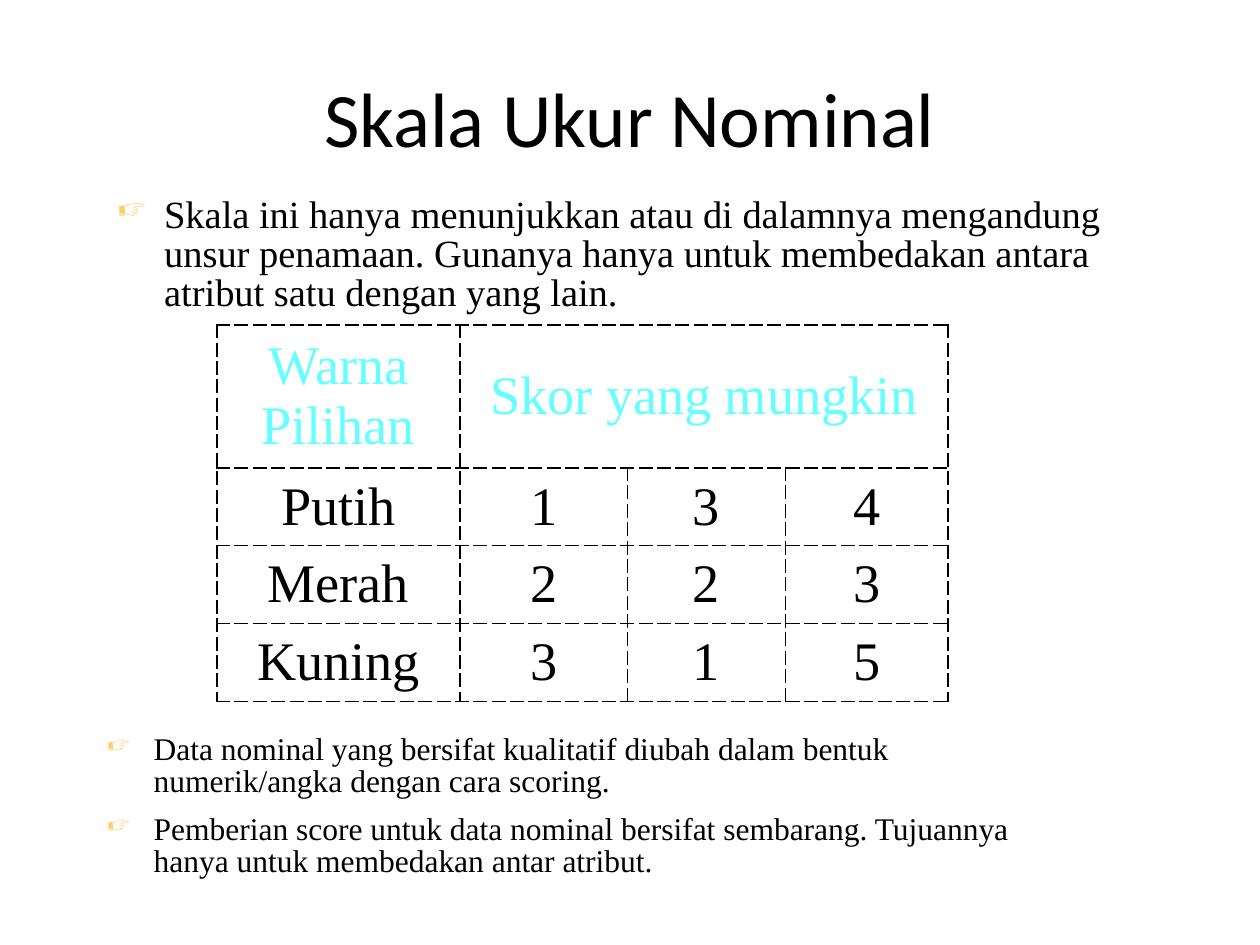
from dataclasses import dataclass

from lxml import etree
from pptx import Presentation, util as u
from pptx.dml.color import RGBColor
from pptx.enum import text
from pptx.oxml import parse_xml
from pptx.oxml.ns import nsdecls, qn

# Content
TITLE = "Skala Ukur Nominal"
INTRO = ["Skala ini hanya menunjukkan atau di dalamnya mengandung unsur penamaan. "
         "Gunanya hanya untuk membedakan antara atribut satu dengan yang lain."]
NOTES = ["Data nominal yang bersifat kualitatif diubah dalam bentuk numerik/angka "
         "dengan cara scoring.",
         "Pemberian score untuk data nominal bersifat sembarang. Tujuannya hanya "
         "untuk membedakan antar atribut."]
HEADER = ["Warna Pilihan", "Skor yang mungkin"]
SCORES = [("Putih", 1, 3, 4), ("Merah", 2, 2, 3), ("Kuning", 3, 1, 5)]


@dataclass(frozen=True)
class Theme:
    ink: str = "000000"
    head: str = "66FFFF"
    bullet: str = "FFCC66"
    title_font: str = "Calibri"
    body_font: str = "Times New Roman"
    title: int = 44
    cell: int = 31
    intro: int = 22
    note: int = 18


T = Theme()


def write(tf, lines, size, color=T.ink, font=T.body_font, align=None, bullet=None):
    """Fill a text frame, one paragraph for each line."""
    tf.word_wrap = True
    for i, line in enumerate(lines):
        p = tf.paragraphs[0] if i == 0 else tf.add_paragraph()
        p.alignment = align
        r = p.add_run()
        r.text = str(line)
        r.font.size, r.font.name = u.Pt(size), font
        r.font.color.rgb = RGBColor.from_string(color)
        if bullet:
            p.line_spacing = 0.85
            p.space_before = u.Pt(size / 2)
            add_bullet(p, bullet)


def add_bullet(p, char):
    pPr = p._p.get_or_add_pPr()
    indent = u.Cm(0.95)
    pPr.set("marL", str(indent))
    pPr.set("indent", str(-indent))
    clr = etree.SubElement(pPr, qn("a:buClr"))
    etree.SubElement(clr, qn("a:srgbClr"), val=T.bullet)
    etree.SubElement(pPr, qn("a:buSzPct"), val="75000")
    etree.SubElement(pPr, qn("a:buChar"), char=char)


def add_borders(cell):
    tcPr = cell._tc.get_or_add_tcPr()
    for side in "LRTB":
        tcPr.append(parse_xml(
            f'<a:ln{side} {nsdecls("a")} w="{u.Pt(1)}"><a:solidFill>'
            f'<a:srgbClr val="{T.ink}"/></a:solidFill>'
            f'<a:prstDash val="dash"/></a:ln{side}>'))


def add_text(s, box, lines, size, **fmt):
    tf = s.shapes.add_textbox(*map(u.Cm, box)).text_frame
    write(tf, lines, size, **fmt)
    return tf


def add_scores(s, left, top, widths, heights):
    gf = s.shapes.add_table(len(heights), len(widths), u.Cm(left), u.Cm(top),
                            u.Cm(sum(widths)), u.Cm(sum(heights)))
    tbl = gf.table
    tbl.first_row = tbl.horz_banding = False
    for col, w in zip(tbl.columns, widths):
        col.width = u.Cm(w)
    for row, h in zip(tbl.rows, heights):
        row.height = u.Cm(h)
    tbl.cell(0, 1).merge(tbl.cell(0, len(widths) - 1))
    for cell in tbl.iter_cells():
        add_borders(cell)
        cell.fill.background()
        cell.vertical_anchor = text.MSO_ANCHOR.MIDDLE
    for i, values in enumerate([HEADER, *SCORES]):
        for j, value in enumerate(values):
            write(tbl.cell(i, j).text_frame, [value], T.cell,
                  color=T.ink if i else T.head, align=text.PP_ALIGN.CENTER)


def main():
    prs = Presentation()
    prs.slide_width, prs.slide_height = u.Cm(25.4), u.Cm(19.05)
    s = prs.slides.add_slide(prs.slide_layouts[6])

    # Introduction, score table, notes
    add_text(s, (2.11, 3.84, 21.16, 2.72), INTRO, T.intro, bullet="☞")
    add_scores(s, 4.37, 6.55, [4.9, 3.38, 3.18, 3.28], [2.87] + [1.57] * len(SCORES))
    add_text(s, (1.9, 14.68, 20.1, 3.58), NOTES, T.note, bullet="☞")

    # Title
    tf = add_text(s, (1.27, 0.76, 22.86, 3.18), [TITLE], T.title,
                  font=T.title_font, align=text.PP_ALIGN.CENTER)
    tf.vertical_anchor = text.MSO_ANCHOR.MIDDLE

    prs.save("out.pptx")


if __name__ == "__main__":
    main()
